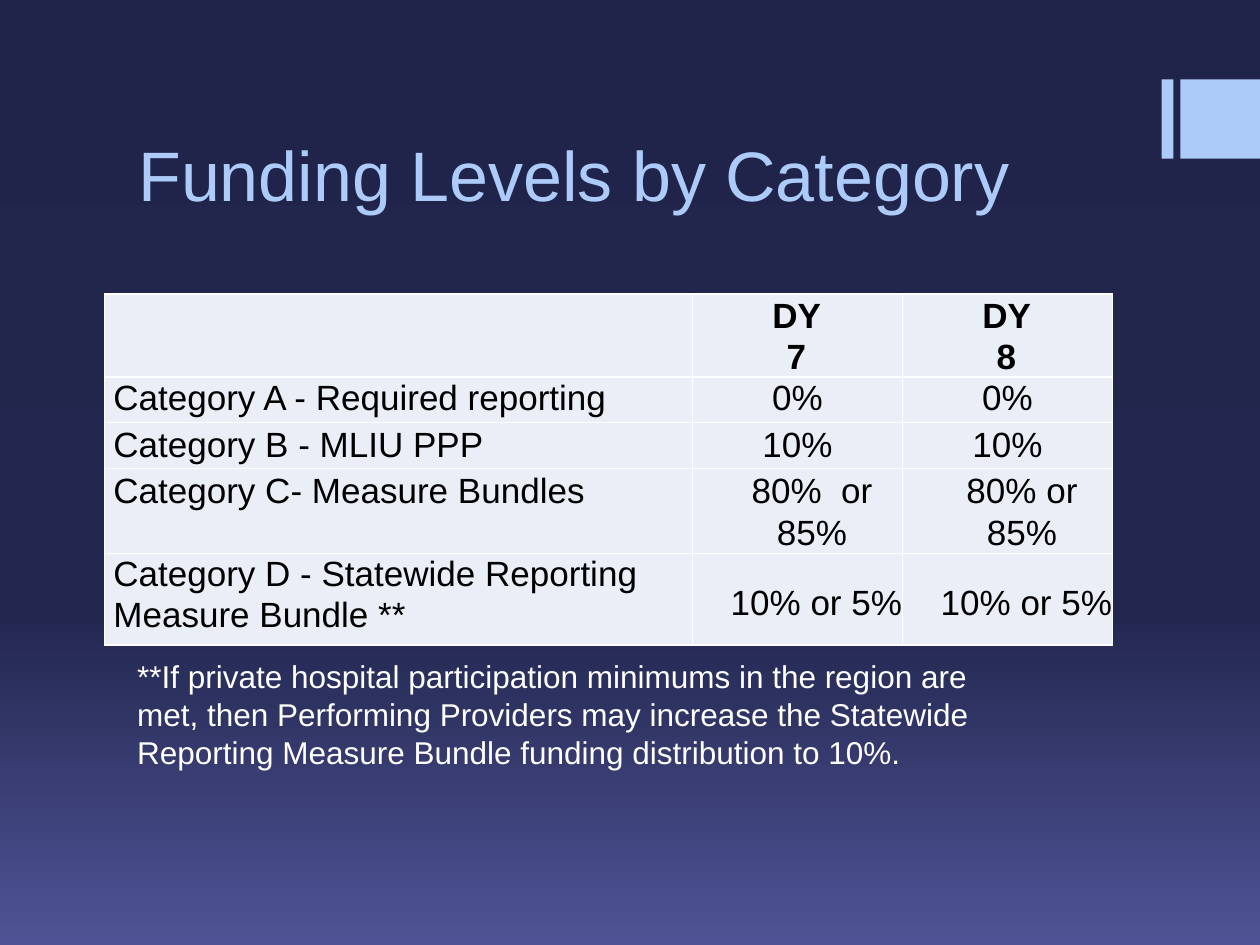
from copy import deepcopy

from lxml.etree import SubElement
from pptx import Presentation
from pptx.dml.color import RGBColor
from pptx.enum.shapes import MSO_SHAPE
from pptx.enum.text import MSO_ANCHOR, PP_ALIGN
from pptx.oxml.ns import qn
from pptx.util import Inches, Pt

WIDE, HIGH = Inches(10), Inches(7.5)
FONT = "Arial"
HUES = {
    "top": "21244A", "mid": "232750", "low": "4F5395",
    "sky": "ACCBF9", "cell": "EAEFF7", "ink": "000000", "white": "FFFFFF",
}
COLS = (14, 5, 5)
ROWS = (1, 1, 1, 1, 2)
LABEL = 0.07

# Label, two values, left and right indent of the values, line spacing, top gap
LEVELS = (
    ("", "DY 7", "DY 8", 0.53, 0.55, Pt(23.7), 0),
    ("Category A - Required reporting", "0%", "0%", 0.61, 0.61, Pt(23.6), 0),
    ("Category B - MLIU PPP", "10%", "10%", 0.54, 0.54, Pt(24.2), 0),
    ("Category C- Measure Bundles", "80%  or 85%", "80% or 85%",
     0.23, 0, Pt(24.2), 0),
    ("Category D - Statewide Reporting Measure Bundle **",
     "10% or 5%", "10% or 5%", 0.3, 0, 1.15, 14),
)


def hue(name):
    return RGBColor.from_string(HUES[name])


def place(left, top, width, height):
    """Turn shares of the slide into lengths."""
    return (int(left * WIDE), int(top * HIGH),
            int(width * WIDE), int(height * HIGH))


def style(para, size, color, bold=False):
    for run in para.runs:
        font = run.font
        font.name, font.size, font.bold = FONT, Pt(size), bold
        font.color.rgb = hue(color)


def backdrop(slide):
    fill = slide.background.fill
    fill.gradient()
    fill.gradient_angle = 270
    stops = slide.element.find(".//" + qn("a:gsLst"))
    stops.append(deepcopy(stops[-1]))
    marks = (("top", 0), ("mid", 0.65), ("low", 1))
    for stop, (name, spot) in zip(fill.gradient_stops, marks):
        stop.color.rgb, stop.position = hue(name), spot


def badge(slide, box):
    """Draw a thin bar and a block that fill the box from edge to edge."""
    left, top, width, height = box
    for start, share in ((0, 0.12), (0.19, 0.81)):
        bar = slide.shapes.add_shape(
            MSO_SHAPE.RECTANGLE, int(left + start * width), top,
            int(share * width), height)
        bar.shadow.inherit = False
        bar.fill.solid()
        bar.fill.fore_color.rgb = hue("sky")
        bar.line.fill.background()


def words(slide, box, text, size, color, anchor=MSO_ANCHOR.TOP):
    frame = slide.shapes.add_textbox(*box).text_frame
    frame.word_wrap = True
    frame.vertical_anchor = anchor
    frame.text = text
    style(frame.paragraphs[0], size, color)


def edge(cell):
    """Give all four sides of a cell a thin white border."""
    props = cell._tc.get_or_add_tcPr()
    for spot, side in enumerate(("lnL", "lnR", "lnT", "lnB")):
        line = SubElement(props, qn("a:" + side), w=str(Pt(1)))
        fill = SubElement(line, qn("a:solidFill"))
        SubElement(fill, qn("a:srgbClr"), val=HUES["white"])
        props.insert(spot, line)


def entry(cell, text, left, right, space, bold):
    cell.margin_left = cell.margin_right = 0
    cell.margin_top = cell.margin_bottom = 0
    cell.fill.solid()
    cell.fill.fore_color.rgb = hue("cell")
    edge(cell)
    cell.text = text
    para = cell.text_frame.paragraphs[0]
    para.line_spacing = space
    props = para._p.get_or_add_pPr()
    props.set("marL", str(Inches(left)))
    props.set("marR", str(Inches(right)))
    style(para, 20, "ink", bold)
    return para


def levels(slide, box):
    width, height = box[2:]
    table = slide.shapes.add_table(len(ROWS), len(COLS), *box).table
    table.first_row = table.horz_banding = False
    for col, share in zip(table.columns, COLS):
        col.width = int(width * share / sum(COLS))
    for row, share in zip(table.rows, ROWS):
        row.height = int(height * share / sum(ROWS))
    for row, level in enumerate(LEVELS):
        label, *values, left, right, space, gap = level
        solo = 1.05 if gap else space
        entry(table.cell(row, 0), label, LABEL, 0, solo, False)
        for col, value in enumerate(values, 1):
            cell = table.cell(row, col)
            para = entry(cell, value, left, right, space, row == 0)
            para.alignment = PP_ALIGN.CENTER
            cell.margin_top = Pt(gap)


def main():
    deck = Presentation()
    deck.slide_width, deck.slide_height = WIDE, HIGH
    slide = deck.slides.add_slide(deck.slide_layouts[6])
    backdrop(slide)
    badge(slide, place(0.922, 0.084, 0.078, 0.084))
    words(slide, place(0.1, 0.067, 0.8, 0.168),
          "Funding Levels by Category", 40, "sky", MSO_ANCHOR.BOTTOM)
    levels(slide, place(0.083, 0.311, 0.8, 0.291))
    words(slide, place(0.099, 0.689, 0.725, 0.135),
          "**If private hospital participation minimums in the region are "
          "met, then Performing Providers may increase the Statewide "
          "Reporting Measure Bundle funding distribution to 10%.",
          18, "white")
    deck.save("out.pptx")


if __name__ == "__main__":
    main()
